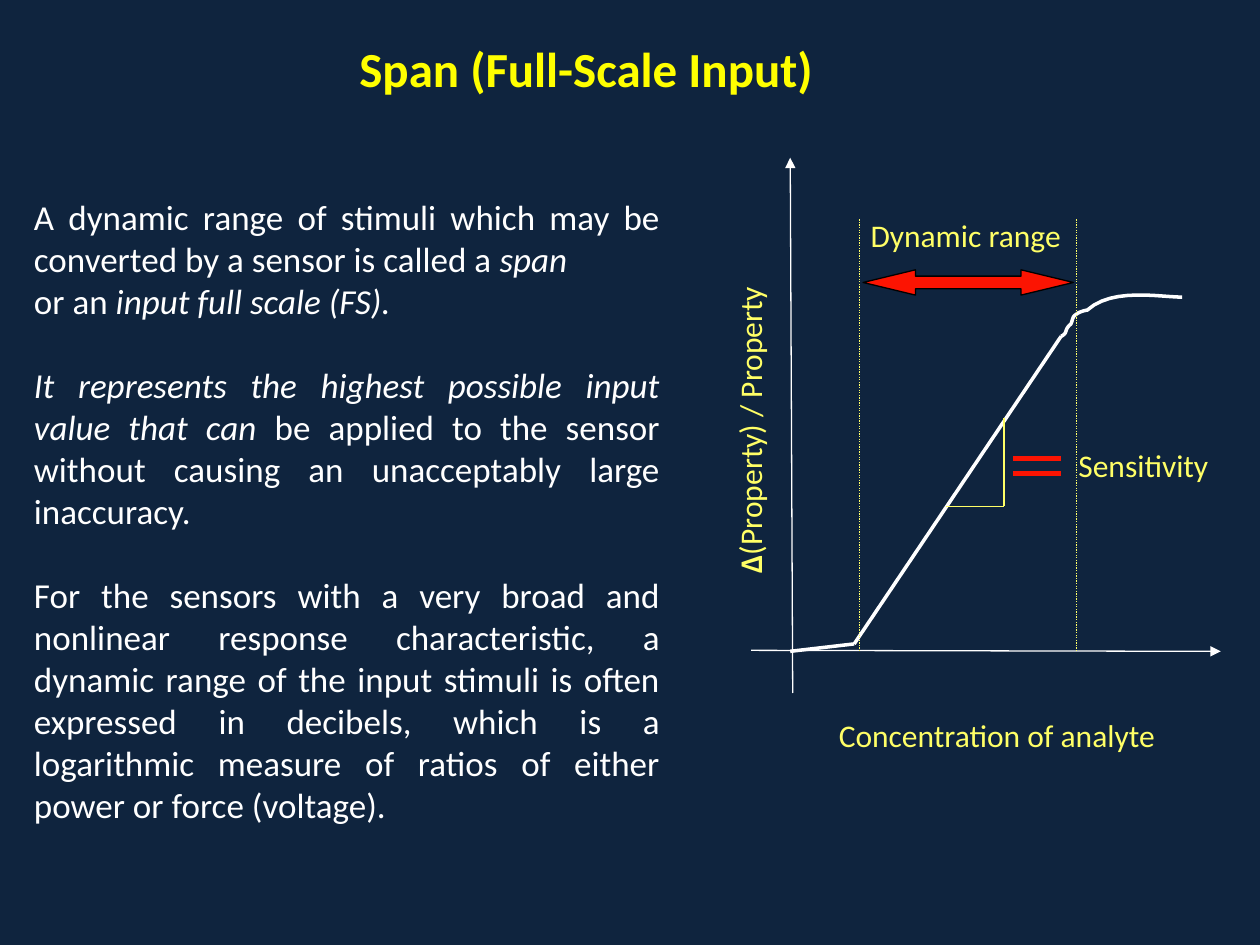
import pptx
import pptx.util
import pptx.dml.color
import pptx.enum.dml
import pptx.enum.shapes
import pptx.enum.text
from lxml import etree
from pptx.oxml.ns import qn
from pptx.util import Cm

COLORS = {
    "background": "0F243E",
    "title": "FFFF00",
    "text": "FFFFFF",
    "label": "FFFF66",
    "accent": "FC1402",
    "outline": "000000",
}
FONT = "Calibri"
ALIGN = pptx.enum.text.PP_ALIGN


def rgb(name):
    return pptx.dml.color.RGBColor.from_string(COLORS[name])


def bezier(start, c1, c2, end, steps=12):
    """Points of a cubic curve, without its start."""
    for step in range(1, steps + 1):
        t = step / steps
        weights = ((1 - t) ** 3, 3 * t * (1 - t) ** 2, 3 * t * t * (1 - t), t ** 3)
        yield tuple(sum(w * p[axis] for w, p in zip(weights, (start, c1, c2, end)))
                    for axis in (0, 1))


class SlideBuilder:
    """Holds the style and the current slide; all lengths are in centimetres."""

    def __init__(self, slide):
        self.slide = slide
        slide.background.fill.solid()
        slide.background.fill.fore_color.rgb = rgb("background")

    def place(self, shape, left, top, width, height):
        shape.left, shape.top = Cm(left), Cm(top)
        shape.width, shape.height = Cm(width), Cm(height)

    def style_run(self, run, size, color, bold=False, italic=False):
        run.font.name, run.font.size = FONT, pptx.util.Pt(size)
        run.font.bold, run.font.italic = bold, italic
        run.font.color.rgb = rgb(color)

    def style_line(self, line, color, width):
        line.color.rgb = rgb(color)
        line.width = pptx.util.Pt(width)

    def title(self, text, *box):
        heading = self.slide.shapes.title
        self.place(heading, *box)
        frame = heading.text_frame
        frame.text = text
        frame.word_wrap = False
        frame.vertical_anchor = pptx.enum.text.MSO_ANCHOR.TOP
        frame.paragraphs[0].alignment = ALIGN.LEFT
        self.style_run(frame.paragraphs[0].runs[0], 28, "title", bold=True)

    def body(self, paragraphs, *box):
        """Each paragraph is (space before, [(text, italic), ...])."""
        body = self.slide.placeholders[1]
        self.place(body, *box)
        frame = body.text_frame
        frame.auto_size = pptx.enum.text.MSO_AUTO_SIZE.NONE
        for index, (gap, pieces) in enumerate(paragraphs):
            paragraph = frame.add_paragraph() if index else frame.paragraphs[0]
            paragraph.alignment = ALIGN.JUSTIFY
            paragraph.space_before = pptx.util.Pt(gap)
            properties = paragraph._p.get_or_add_pPr()
            properties.set("marL", "0")
            properties.set("indent", "0")
            etree.SubElement(properties, qn("a:buNone"))
            for text, italic in pieces:
                run = paragraph.add_run()
                run.text = text
                self.style_run(run, 20, "text", italic=italic)

    def label(self, text, *box, rotation=0, inset=0.25):
        label = self.slide.shapes.add_textbox(*map(Cm, box))
        label.rotation = rotation
        frame = label.text_frame
        frame.text = text
        frame.word_wrap = True
        frame.margin_left = Cm(inset)
        self.style_run(frame.paragraphs[0].runs[0], 18, "label")
        return frame.paragraphs[0]

    def line(self, start, end, color, width=0.75, dotted=False, arrow=False):
        line = self.slide.shapes.add_connector(
            pptx.enum.shapes.MSO_CONNECTOR.STRAIGHT, *map(Cm, start + end))
        self.style_line(line.line, color, width)
        if dotted:
            line.line.dash_style = pptx.enum.dml.MSO_LINE.ROUND_DOT
        if arrow:
            etree.SubElement(line.line._get_or_add_ln(), qn("a:tailEnd"), type="triangle")
        etree.SubElement(line._element.spPr, qn("a:effectLst"))

    def curve(self, start, segments, color, width):
        points = []
        current = start
        for segment in segments:
            points.extend(bezier(current, *segment))
            current = segment[-1]
        builder = self.slide.shapes.build_freeform(Cm(start[0]), Cm(start[1]))
        builder.add_line_segments([(Cm(x), Cm(y)) for x, y in points], close=False)
        curve = builder.convert_to_shape()
        curve.shadow.inherit = False
        curve.fill.background()
        self.style_line(curve.line, color, width)

    def double_arrow(self, *box):
        arrow = self.slide.shapes.add_shape(
            pptx.enum.shapes.MSO_SHAPE.LEFT_RIGHT_ARROW, *map(Cm, box))
        arrow.adjustments[0], arrow.adjustments[1] = 0.5, 2.07
        arrow.shadow.inherit = False
        arrow.fill.solid()
        arrow.fill.fore_color.rgb = rgb("accent")
        self.style_line(arrow.line, "outline", 0.75)


def main():
    deck = pptx.Presentation()
    deck.slide_width, deck.slide_height = Cm(25.4), Cm(19.05)
    page = SlideBuilder(deck.slides.add_slide(deck.slide_layouts[1]))

    # Title and explanation
    page.title("Span (Full-Scale Input)", 6.99, 0.64, 9.75, 1.45)
    blank_line = 24
    page.body([
        (0, [("A dynamic range of stimuli which may be converted by a sensor "
              "is called a ", False), ("span", True)]),
        (0, [("or an ", False), ("input full scale (FS). ", True)]),
        (blank_line, [("It represents the highest possible input value that can ", True),
                      ("be applied to the sensor without causing an unacceptably "
                       "large inaccuracy. ", False)]),
        (blank_line, [("For the sensors with a very broad and nonlinear response "
                       "characteristic, a dynamic range of the input stimuli is often "
                       "expressed in decibels, which is a logarithmic measure of ratios "
                       "of either power or force (voltage).", False)]),
    ], 0.43, 3.81, 13.13, 13.08)

    # Axes
    page.line((15.98, 13.97), (15.93, 3.18), "text", arrow=True)
    page.line((15.14, 13.11), (24.61, 13.13), "text", arrow=True)

    # Response: foot, linear part, saturation
    range_start, range_end = (17.22, 12.98), (21.39, 6.78)
    page.line((15.93, 13.13), range_start, "text", 2)
    page.line(range_start, range_end, "text", 2)
    page.curve(range_end, [
        ((21.54, 6.71), (21.44, 6.65), (21.59, 6.53)),
        ((21.64, 6.40), (21.62, 6.38), (21.72, 6.32)),
        ((21.79, 6.27), (21.92, 6.25), (21.92, 6.25)),
        ((22.43, 5.79), (23.39, 5.99), (23.83, 5.99)),
    ], "text", 2)

    # Axis labels
    property_label = page.label("Δ", 10.26, 7.29, 9.78, 1.09, rotation=270, inset=1.17)
    property_label.runs[0].font.bold = True
    ratio = property_label.add_run()
    ratio.text = "(Property) / Property"
    page.style_run(ratio, 18, "label")
    page.label("Concentration of analyte", 16.66, 14.3, 9.8, 1.35)

    # Dynamic range between its two limits
    for limit in (17.32, 21.7):
        page.line((limit, 4.42), (limit, 13.11), "label", dotted=True)
    page.double_arrow(17.4, 5.44, 4.24, 0.51)
    page.label("Dynamic range", 17.3, 4.24, 8.03, 1.35)

    # Slope triangle and equals sign for the sensitivity
    corner = (20.24, 10.21)
    for end in ((20.24, 8.43), (19.08, 10.21)):
        page.line(corner, end, "label")
    for bar in (9.25, 9.55):
        page.line((20.42, bar), (21.39, bar), "accent", 3)
    page.label("Sensitivity", 21.49, 8.86, 3.86, 1.35)

    deck.save("out.pptx")


if __name__ == "__main__":
    main()
